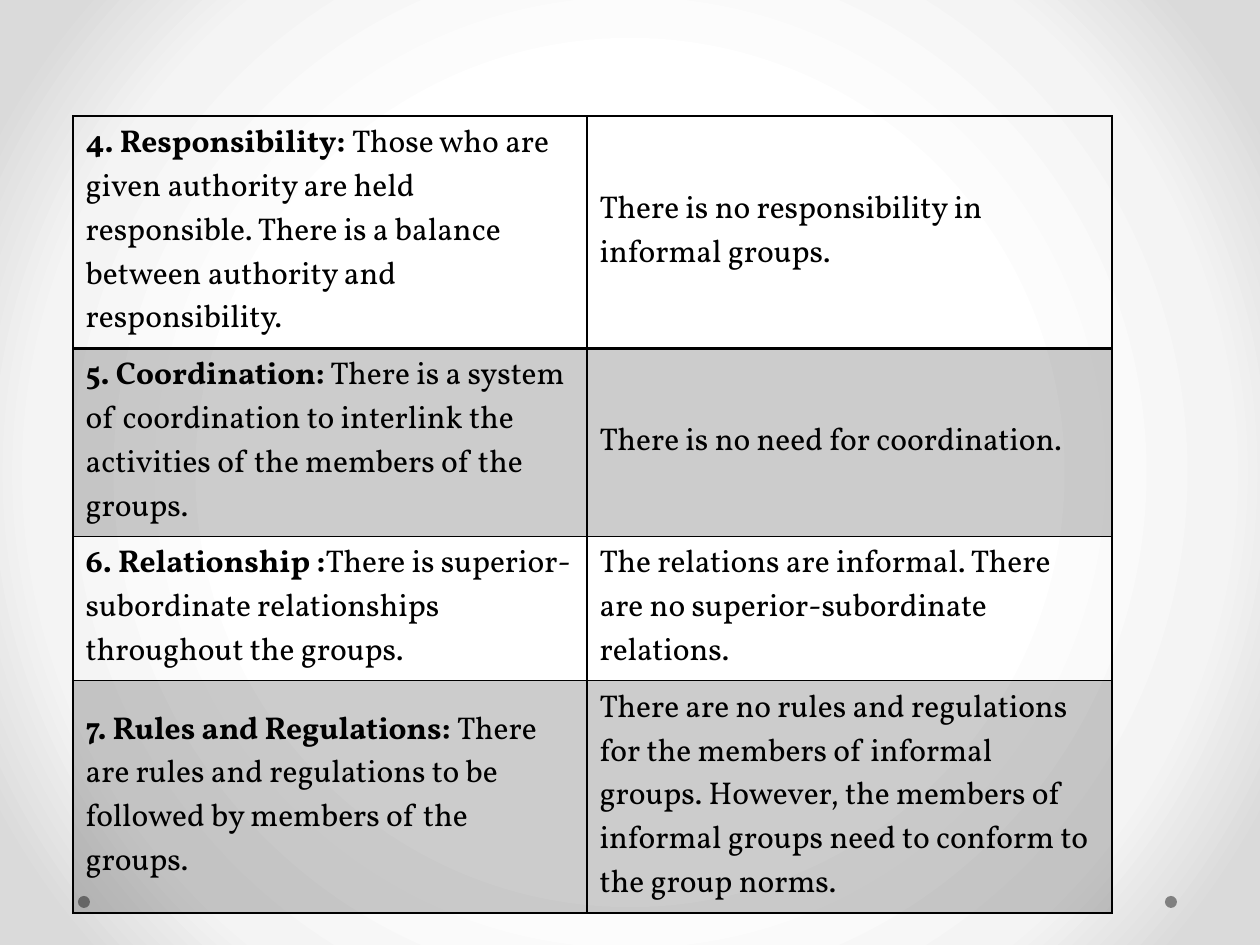
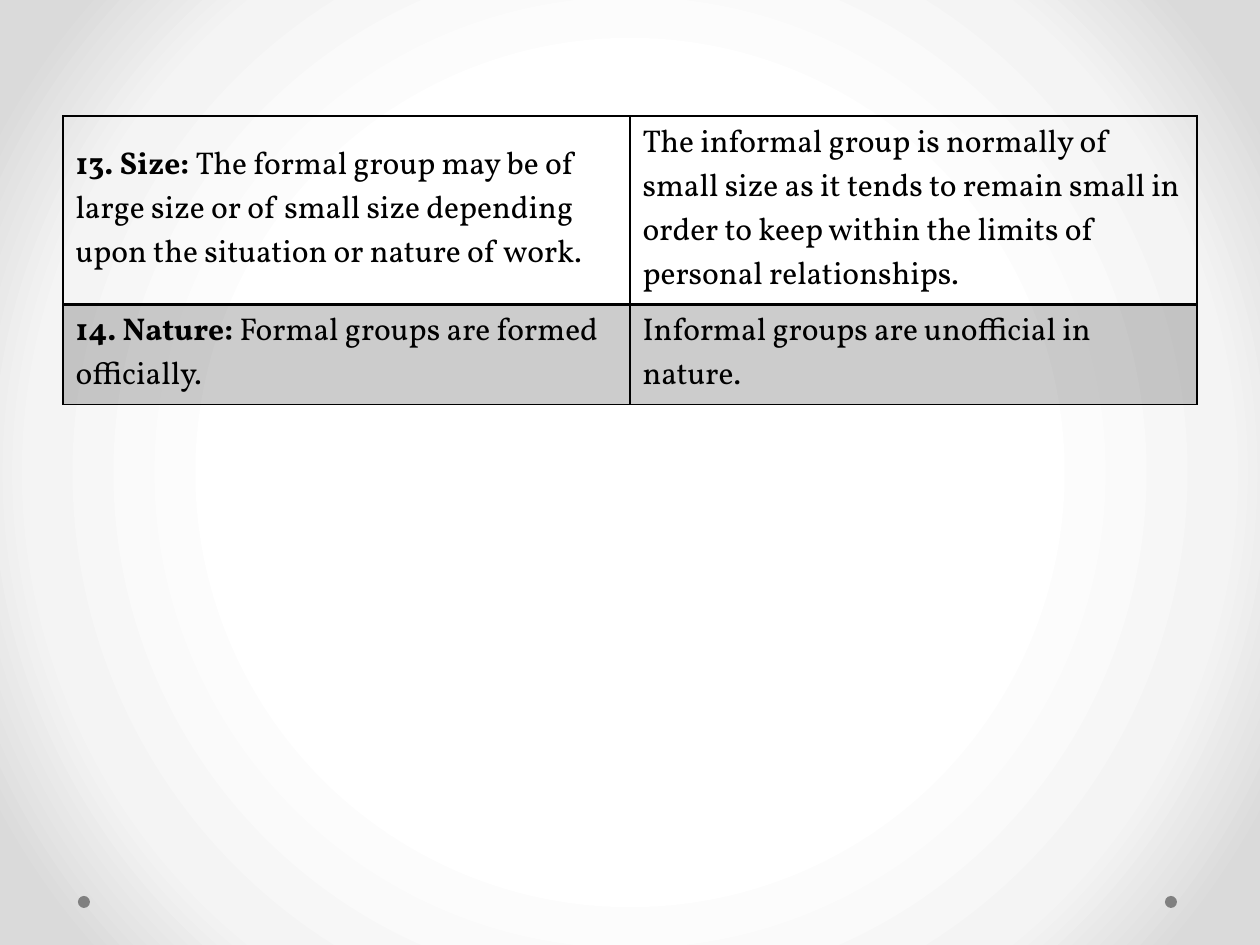
from lxml import etree
from pptx import Presentation
from pptx.dml.color import RGBColor
from pptx.enum.shapes import MSO_SHAPE
from pptx.enum.text import MSO_ANCHOR
from pptx.oxml import parse_xml
from pptx.oxml.ns import qn
from pptx.util import Pt

PX = 914400 / 126
OVAL = MSO_SHAPE.OVAL
MIDDLE = MSO_ANCHOR.MIDDLE
BLACK = RGBColor(0x00, 0x00, 0x00)
DOT_GREY = RGBColor(0x80, 0x80, 0x80)
GLOW = [
    (50, RGBColor(0xFF, 0xFF, 0xFF)),
    (76, RGBColor(0xF4, 0xF4, 0xF4)),
    (92, RGBColor(0xDA, 0xDA, 0xDA)),
]
FONT = "Vollkorn"
DRAWING_NS = "http://schemas.openxmlformats.org/drawingml/2006/main"

COMPARISONS = [
    {
        "left": 73, "height": 698, "columns": [514, 525], "row_heights": [175, 142, 131, 175],
        "rows": [
            ("4. Responsibility: ",
             "Those who are given authority are held responsible. There is a balance between authority and responsibility.",
             "There is no responsibility in informal groups."),
            ("5. Coordination:",
             " There is a system of coordination to interlink the activities of the members of the groups.",
             "There is no need for coordination."),
            ("6. Relationship :",
             "There is superior-subordinate relationships throughout the groups.",
             "The relations are informal. There are no superior-subordinate relations."),
            ("7. Rules and Regulations: ",
             "There are rules and regulations to be followed by members of the groups.",
             "There are no rules and regulations for the members of informal groups. "
             "However, the members of informal groups need to conform to the group norms."),
        ],
    },
    {
        "left": 63, "height": 252, "columns": [567, 567], "row_heights": [52, 52],
        "rows": [
            ("13. Size: ",
             "The formal group may be of large size or of small size depending upon the situation or nature of work.",
             "The informal group is normally of small size as it tends to remain small "
             "in order to keep within the limits of personal relationships."),
            ("14. Nature: ",
             "Formal groups are formed officially.",
             "Informal groups are unofficial in nature."),
        ],
    },
]


def px(length):
    return round(length * PX)


def border_cell(cell, bottom_width):
    properties = cell._tc.get_or_add_tcPr()
    for side, width in (("L", 1), ("R", 1), ("T", 1), ("B", bottom_width)):
        line = etree.SubElement(properties, qn(f"a:ln{side}"), w=str(Pt(width)))
        fill = etree.SubElement(line, qn("a:solidFill"))
        etree.SubElement(fill, qn("a:srgbClr"), val=str(BLACK))


prs = Presentation()
prs.slide_width = px(1260)
prs.slide_height = px(945)

stops = "".join(
    f'<a:gs pos="{position * 1000}"><a:srgbClr val="{color}"/></a:gs>' for position, color in GLOW
)
glow_fill = parse_xml(
    f'<a:gradFill xmlns:a="{DRAWING_NS}" rotWithShape="1"><a:gsLst>{stops}</a:gsLst>'
    '<a:path path="circle"><a:fillToRect l="50000" t="50000" r="50000" b="50000"/></a:path>'
    '</a:gradFill>'
)
master = prs.slide_master
master.background.fill.solid()
plain_fill = master.element.find(".//" + qn("p:bgPr")).find(qn("a:solidFill"))
plain_fill.getparent().replace(plain_fill, glow_fill)

for comparison in COMPARISONS:
    slide = prs.slides.add_slide(prs.slide_layouts[6])

    for dot_left in (1165, 78):
        dot = slide.shapes.add_shape(OVAL, px(dot_left), px(896), px(12), px(12))
        dot.shadow.inherit = False
        dot.fill.solid()
        dot.fill.fore_color.rgb = DOT_GREY
        dot.line.fill.background()

    rows = comparison["rows"]
    frame = slide.shapes.add_table(
        len(rows), 2, px(comparison["left"]), px(116),
        px(sum(comparison["columns"])), px(comparison["height"]),
    )
    table = frame.table
    table.first_row = False
    table.horz_banding = False
    for column, width in zip(table.columns, comparison["columns"]):
        column.width = px(width)
    for row, height in zip(table.rows, comparison["row_heights"]):
        row.height = px(height)
    frame.height = px(comparison["height"])

    for row_index, (aspect, formal, informal) in enumerate(rows):
        row_texts = [[(aspect, True), (formal, False)], [(informal, False)]]
        for column_index, runs in enumerate(row_texts):
            cell = table.cell(row_index, column_index)
            cell.vertical_anchor = MIDDLE
            border_cell(cell, 2 if row_index == 0 else 1)
            if row_index % 2:
                cell.fill.solid()
                cell.fill.fore_color.rgb = BLACK
                shade = cell._tc.tcPr.find(qn("a:solidFill")).find(qn("a:srgbClr"))
                etree.SubElement(shade, qn("a:alpha"), val="20000")
            else:
                cell.fill.background()
            paragraph = cell.text_frame.paragraphs[0]
            for text, bold in runs:
                run = paragraph.add_run()
                run.text = text
                run.font.name = FONT
                run.font.size = Pt(18)
                run.font.bold = bold
                run.font.color.rgb = BLACK

prs.save("out.pptx")
